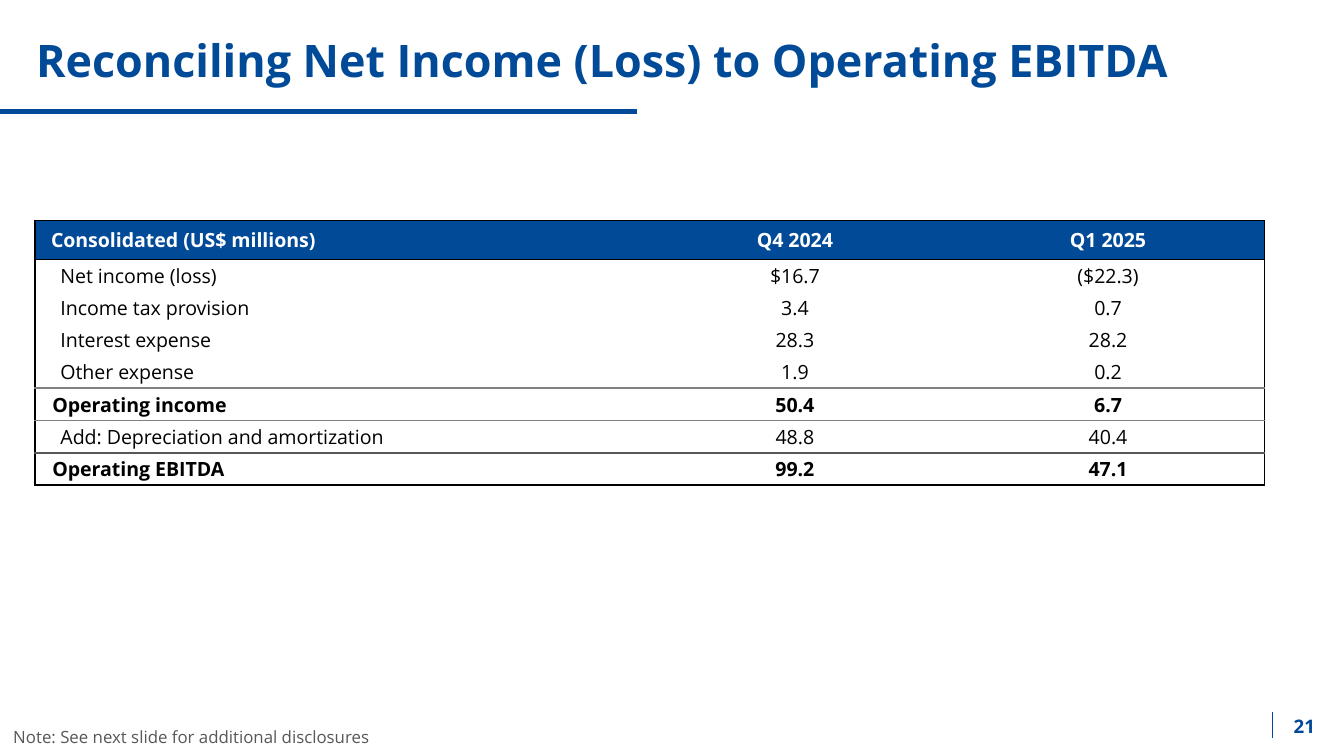
"""Build the slide reconciling net income (loss) to operating EBITDA."""
import pptx
import pptx.dml.color
import pptx.enum.shapes
import pptx.enum.text
import pptx.oxml
import pptx.oxml.ns
import pptx.util
from lxml import etree

Inches, Pt = pptx.util.Inches, pptx.util.Pt
ALIGN, ANCHOR = pptx.enum.text.PP_ALIGN, pptx.enum.text.MSO_ANCHOR

COLORS = {"blue": "004A97", "white": "FFFFFF", "black": "000000", "gray": "808080", "slate": "555759"}
FONT = "Open Sans"
WIDTH = 10
HEIGHT = WIDTH * 9 / 16

TITLE = "Reconciling Net Income (Loss) to Operating EBITDA"
PAGE_NUMBER = "21"
NOTE = "Note: See next slide for additional disclosures"

# kind, label, Q4 value, Q1 value, rule below the row
ROWS = [
    ("header", "Consolidated (US$ millions)", "Q4 2024", "Q1 2025", ("black", 0.5)),
    ("item", "Net income (loss)", "$16.7", "($22.3)", None),
    ("item", "Income tax provision", "3.4", "0.7", None),
    ("item", "Interest expense", "28.3", "28.2", None),
    ("item", "Other expense", "1.9", "0.2", ("gray", 1)),
    ("total", "Operating income", "50.4", "6.7", ("gray", 1)),
    ("item", "Add: Depreciation and amortization", "48.8", "40.4", ("slate", 1)),
    ("total", "Operating EBITDA", "99.2", "47.1", ("black", 1)),
]
OUTLINE = ("black", 1)
COLUMNS = (4.49, 2.33, 2.33)
ROW_HEIGHTS = {"header": 0.29, "item": 0.24, "total": 0.24}
HEADER_INSET = 0.12
INDENTS = {"header": 0, "item": 0.19, "total": 0.13}


def rgb(name):
    return pptx.dml.color.RGBColor.from_string(COLORS[name])


def write(frame, text, size, color, bold=False, align=ALIGN.LEFT, indent=0):
    frame.text = text
    paragraph = frame.paragraphs[0]
    paragraph.alignment = align
    if indent:
        properties = paragraph._p.get_or_add_pPr()
        properties.set("marL", str(Inches(indent)))
        properties.set("indent", "0")
    font = paragraph.runs[0].font
    font.name, font.size, font.bold = FONT, Pt(size), bold
    font.color.rgb = rgb(color)


def add_text(page, place, inset, anchor, *style):
    box = page.shapes.add_textbox(*map(Inches, place))
    frame = box.text_frame
    frame.word_wrap = True
    frame.vertical_anchor = anchor
    frame.margin_left = frame.margin_right = Inches(0.1)
    frame.margin_top = frame.margin_bottom = Inches(inset)
    write(frame, *style)


def add_line(page, start, end, width):
    line = page.shapes.add_connector(
        pptx.enum.shapes.MSO_CONNECTOR.STRAIGHT, *map(Inches, start + end))
    line.line.color.rgb = rgb("blue")
    line.line.width = Pt(width)
    etree.SubElement(line._element.spPr, pptx.oxml.ns.qn("a:effectLst"))


def set_border(cell, side, rule):
    properties = cell._tc.get_or_add_tcPr()
    line = etree.SubElement(properties, pptx.oxml.ns.qn("a:ln" + side))
    if rule is None:
        etree.SubElement(line, pptx.oxml.ns.qn("a:noFill"))
        return
    color, width = rule
    line.set("w", str(Pt(width)))
    fill = etree.SubElement(line, pptx.oxml.ns.qn("a:solidFill"))
    etree.SubElement(fill, pptx.oxml.ns.qn("a:srgbClr")).set("val", COLORS[color])


def add_reconciliation(page, left, top):
    heights = [ROW_HEIGHTS[row[0]] for row in ROWS]
    table = page.shapes.add_table(
        len(ROWS), len(COLUMNS), *map(Inches, (left, top, sum(COLUMNS), sum(heights)))).table
    table.first_row = table.horz_banding = False
    for column, width in zip(table.columns, COLUMNS):
        column.width = Inches(width)
    rule_above = OUTLINE
    for number, (kind, *texts, rule_below) in enumerate(ROWS):
        is_header = kind == "header"
        table.rows[number].height = Inches(heights[number])
        for position, text in enumerate(texts):
            is_label = position == 0
            cell = table.cell(number, position)
            cell.vertical_anchor = ANCHOR.MIDDLE
            cell.margin_left = Inches(HEADER_INSET if is_header and is_label else 0)
            cell.margin_right = cell.margin_top = cell.margin_bottom = 0
            set_border(cell, "L", OUTLINE if is_label else None)
            set_border(cell, "R", OUTLINE if position == len(COLUMNS) - 1 else None)
            set_border(cell, "T", rule_above)
            set_border(cell, "B", rule_below)
            if is_header:
                cell.fill.solid()
                cell.fill.fore_color.rgb = rgb("blue")
            else:
                cell.fill.background()
            write(cell.text_frame, text, 10.5, "white" if is_header else "black", kind != "item",
                  ALIGN.LEFT if is_label else ALIGN.CENTER, INDENTS[kind] if is_label else 0)
        rule_above = rule_below


def main():
    deck = pptx.Presentation()
    deck.slide_width, deck.slide_height = Inches(WIDTH), Inches(HEIGHT)
    page = deck.slides.add_slide(deck.slide_layouts[6])
    add_line(page, (9.47, 5.3), (9.47, 5.49), 0.75)
    add_line(page, (0, 0.83), (4.74, 0.83), 3)
    add_text(page, (0.17, 0.14, 9.15, 0.63), 0.1, ANCHOR.TOP, TITLE, 24, "blue", True)
    add_text(page, (9.47, 5.26, 0.47, 0.28), 0.1, ANCHOR.MIDDLE,
             PAGE_NUMBER, 10, "blue", True, ALIGN.CENTER)
    add_reconciliation(page, 0.26, 1.64)
    add_text(page, (0, 5.36, 10.38, 0.25), 0.05, ANCHOR.TOP, NOTE, 9, "slate")
    deck.save("out.pptx")


if __name__ == "__main__":
    main()
